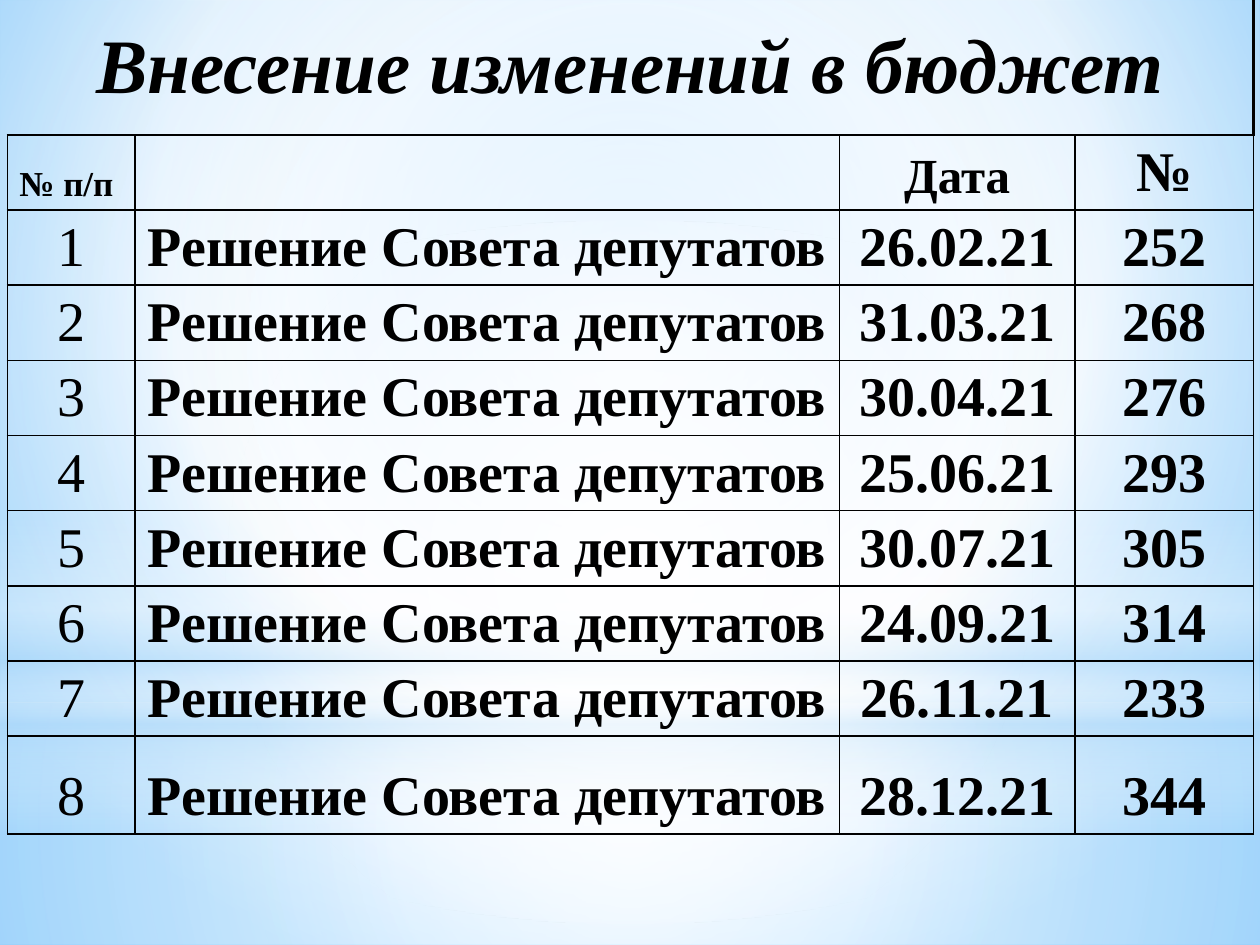
import pptx
import pptx.util
import pptx.dml.color
import pptx.enum.shapes
import pptx.enum.text
import pptx.oxml
import pptx.oxml.ns

Cm = pptx.util.Cm
ALIGN = pptx.enum.text.PP_ALIGN
ANCHOR = pptx.enum.text.MSO_ANCHOR
SHAPE = pptx.enum.shapes.MSO_SHAPE

COLORS = {"ink": "000000", "white": "FFFFFF", "pale": "B4DCFA",
          "sky": "9ED5FF", "deep": "5BB9FF"}
FONT = "Times New Roman"
WIDE, HIGH = 25.4, 19.05
CENTRE = (50, 50, 50, 50)
COLS = (2.57, 14.2, 4.75, 3.6)
ROWS = (2.72,) + (1.51,) * 8 + (1.97,)
ACTS = (("26.02.21", "252"), ("31.03.21", "268"), ("30.04.21", "276"),
        ("25.06.21", "293"), ("30.07.21", "305"), ("24.09.21", "314"),
        ("26.11.21", "233"), ("28.12.21", "344"))


def node(xml):
    """Parse an XML string whose root is in the drawing namespace."""
    space = pptx.oxml.ns.nsdecls("a")
    return pptx.oxml.parse_xml(xml.replace(">", f" {space}>", 1))


def blend(fill, props, stops, focus=None):
    """Give props a gradient of (place, colour, opacity) stops.

    It is circular around focus, or runs downwards without one.
    """
    fill.solid()
    marks = "".join(
        f'<a:gs pos="{at * 1000}"><a:srgbClr val="{COLORS[color]}">'
        f'<a:alpha val="{alpha * 1000}"/></a:srgbClr></a:gs>'
        for at, color, alpha in stops)
    if focus:
        sides = " ".join(f'{side}="{part * 1000}"'
                         for side, part in zip("ltrb", focus))
        way = f'<a:path path="circle"><a:fillToRect {sides}/></a:path>'
    else:
        way = '<a:lin ang="5400000" scaled="0"/>'
    old = props.find(pptx.oxml.ns.qn("a:solidFill"))
    props.replace(old, node(
        f'<a:gradFill rotWithShape="1"><a:gsLst>{marks}</a:gsLst>{way}'
        '</a:gradFill>'))


def glow(slide, kind, top, high, stops, focus=None):
    """Add a full-width, outline-free gradient shape."""
    shape = slide.shapes.add_shape(kind, 0, Cm(top), Cm(WIDE), Cm(high))
    shape.shadow.inherit = False
    shape.line.fill.background()
    blend(shape.fill, shape.element.spPr, stops, focus)


def backdrop(slide):
    back = slide.background.fill
    props = slide.element.cSld.find(
        f'{pptx.oxml.ns.qn("p:bg")}/{pptx.oxml.ns.qn("p:bgPr")}')
    blend(back, props, ((0, "sky", 100), (60, "white", 100),
                        (100, "deep", 100)), (20, 10, 20, 60))
    split = 14.17
    glow(slide, SHAPE.RECTANGLE, split, HIGH - split,
         ((0, "white", 91), (37, "white", 76), (100, "pale", 79)), CENTRE)
    glow(slide, SHAPE.RECTANGLE, 0, split,
         ((0, "white", 89), (48, "white", 62), (100, "pale", 79)), CENTRE)
    glow(slide, SHAPE.RECTANGLE, 10.46, 6.35,
         ((0, "white", 0), (29, "white", 30), (45, "pale", 40),
          (55, "white", 26), (65, "pale", 60), (100, "white", 0)))
    glow(slide, SHAPE.OVAL, 4.45, split,
         ((0, "white", 100), (56, "white", 0)), CENTRE)


def write(cell, text, size=32, bold=True, italic=False, align=ALIGN.CENTER,
          anchor=ANCHOR.BOTTOM):
    cell.vertical_anchor = anchor
    para = cell.text_frame.paragraphs[0]
    para.alignment = align
    if not text:
        return
    run = para.add_run()
    run.text = text
    font = run.font
    font.name, font.size = FONT, pptx.util.Pt(size)
    font.bold, font.italic = bold, italic
    font.color.rgb = pptx.dml.color.RGBColor.from_string(COLORS["ink"])


def frame(cell, left=1, right=1, top=1, bottom=1):
    """Clear the cell's fill and set its border widths in points."""
    cell.margin_left = cell.margin_right = Cm(0.24)
    cell.margin_top = cell.margin_bottom = Cm(0.13)
    cell.fill.background()
    props = cell._tc.get_or_add_tcPr()
    sides = zip("LRTB", (left, right, top, bottom))
    for spot, (side, width) in enumerate(sides):
        paint = (f'<a:solidFill><a:srgbClr val="{COLORS["ink"]}"/>'
                 '</a:solidFill>' if width else '<a:noFill/>')
        props.insert(spot, node(
            f'<a:ln{side} w="{int(width * 12700)}">{paint}</a:ln{side}>'))


def grid(slide):
    table = slide.shapes.add_table(
        len(ROWS), len(COLS), Cm(0.15), 0, Cm(sum(COLS)),
        Cm(sum(ROWS))).table
    table.first_row = table.horz_banding = False
    for col, width in zip(table.columns, COLS):
        col.width = Cm(width)
    for index, (row, height) in enumerate(zip(table.rows, ROWS)):
        row.height = Cm(height)
        for cell in row.cells:
            if index:
                frame(cell)
            else:
                frame(cell, left=0, right=2.25, top=0)
    return table


def main():
    deck = pptx.Presentation()
    deck.slide_width, deck.slide_height = Cm(WIDE), Cm(HIGH)
    slide = deck.slides.add_slide(deck.slide_layouts[6])
    backdrop(slide)
    table = grid(slide)
    title = table.cell(0, 0)
    title.merge(table.cell(0, len(COLS) - 1))
    write(title, "Внесение изменений в бюджет", size=44, italic=True,
          anchor=ANCHOR.MIDDLE)
    write(table.cell(1, 0), "№ п/п", size=20, align=ALIGN.LEFT)
    write(table.cell(1, 2), "Дата", size=28)
    write(table.cell(1, 3), "№")
    for count, (date, number) in enumerate(ACTS, 1):
        cells = table.rows[count + 1].cells
        texts = (str(count), "Решение Совета депутатов", date, number)
        for col, (cell, text) in enumerate(zip(cells, texts)):
            write(cell, text, bold=col > 0)
    deck.save("out.pptx")


if __name__ == "__main__":
    main()
